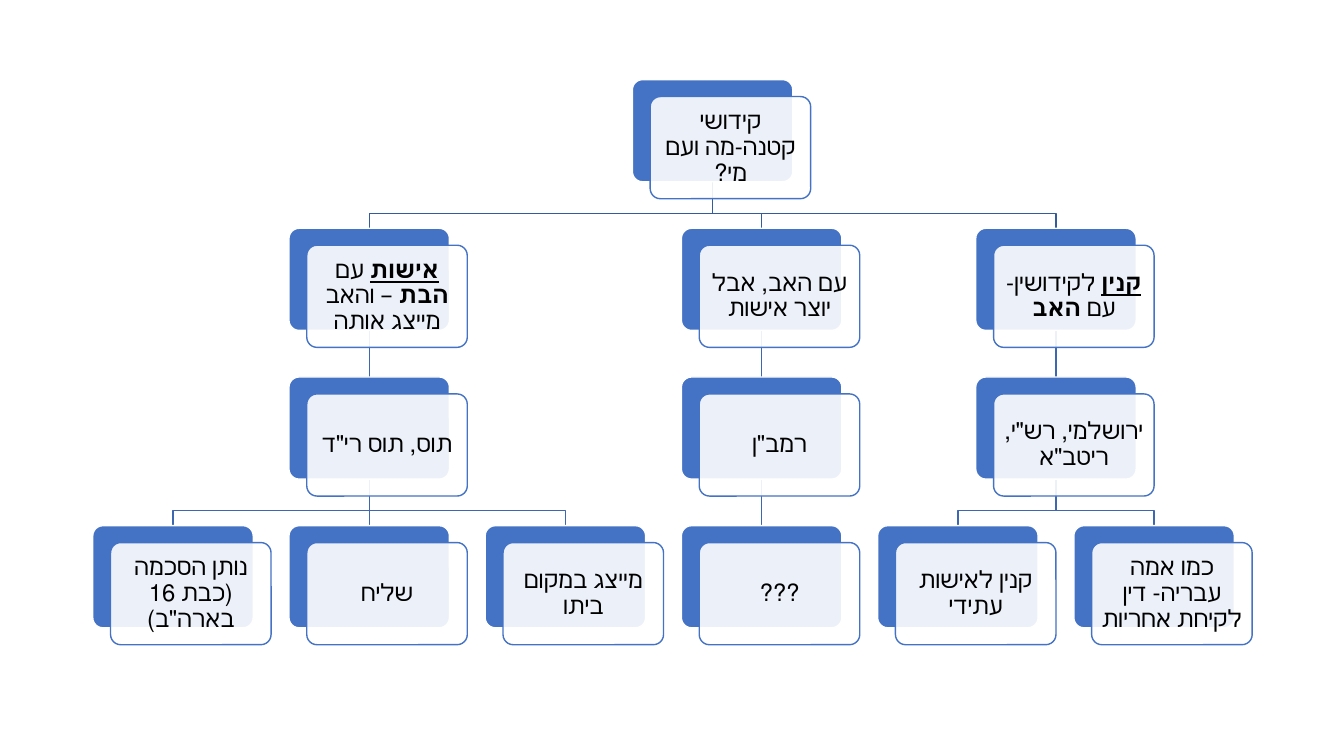
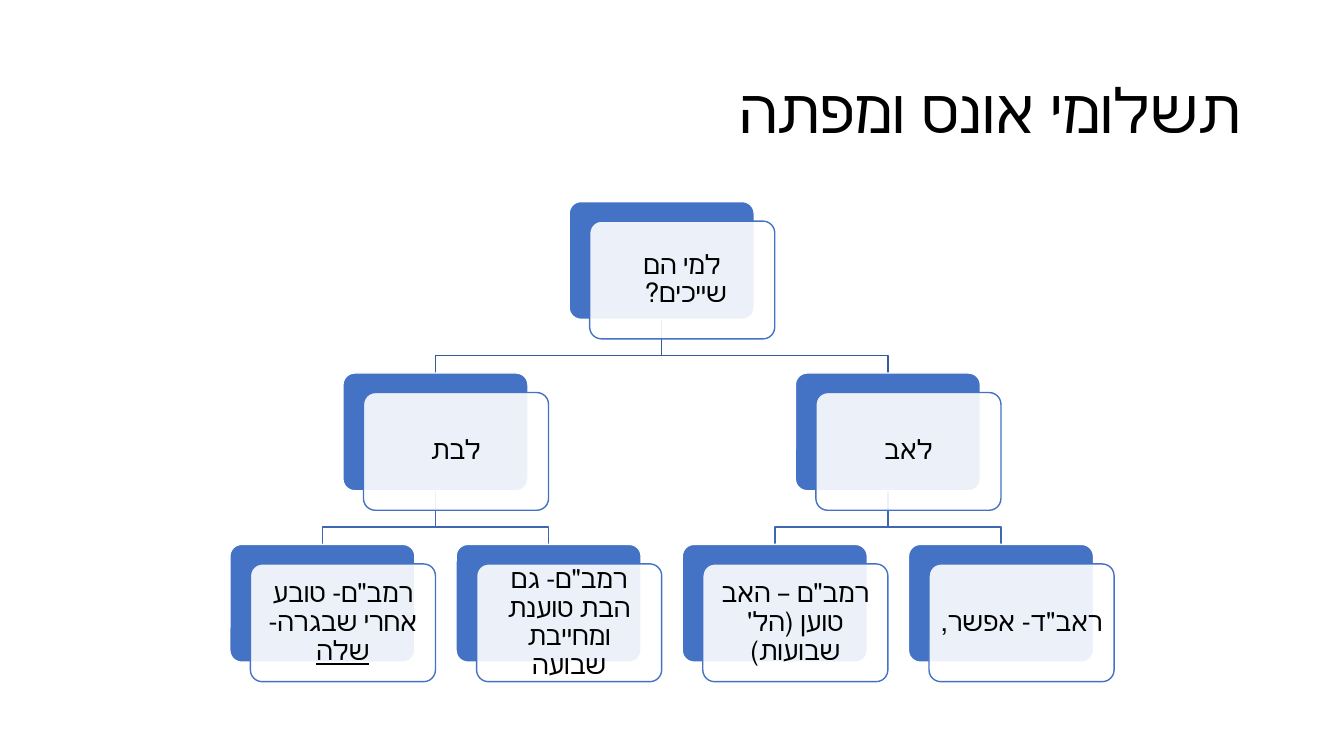
from dataclasses import dataclass
from math import isclose

from pptx import Presentation
from pptx.dml.color import RGBColor
from pptx.enum.shapes import MSO_CONNECTOR as Connector, MSO_SHAPE as Shape
from pptx.enum.text import MSO_ANCHOR as Anchor, PP_ALIGN as Align
from pptx.oxml.ns import qn
from pptx.oxml.xmlchemy import OxmlElement
from pptx.util import Inches, Pt


@dataclass(frozen=True)
class Theme:
    """Colours, font, type sizes and side margin of the deck."""
    accent: str = "4472C4"
    trunk: str = "365B9D"
    branch: str = "3E67B2"
    paper: str = "FFFFFF"
    ink: str = "000000"
    font: str = "Calibri"
    title_size: int = 44
    line_width: int = 1
    card_opacity: int = 90
    margin: float = 0.92


@dataclass
class Topic:
    """A node of the tree, its children listed from left to right."""
    label: str | list
    children: tuple = ()
    column: float = 0
    row: int = 0

    def arrange(self, row=0, first_column=0):
        """Give leaves successive columns, centre parents, return the next free column."""
        self.row = row
        if not self.children:
            self.column = first_column
            return first_column + 1
        free_column = first_column
        for child in self.children:
            free_column = child.arrange(row + 1, free_column)
        self.column = (self.children[0].column + self.children[-1].column) / 2
        return free_column

    def walk(self):
        """Yield this topic and all below it."""
        yield self
        for child in self.children:
            yield from child.walk()


@dataclass
class TreeGrid:
    """Proportions of a tree, all derived from its width and number of columns."""
    left: float
    top: float
    width: float
    columns: int
    text_size: int

    def __post_init__(self):
        self.card_width = self.width * 9 / (11 * self.columns - 1)
        self.card_height = self.card_width * 7 / 11
        self.column_step = self.card_width * 11 / 9
        self.row_step = self.card_height + self.card_width * 0.29
        self.shift_x = self.card_width / 9
        self.shift_y = self.shift_x * 0.95
        self.inset = self.card_width / 23

    def corner(self, topic):
        """Return the top left corner of a topic's back card."""
        return (self.left + topic.column * self.column_step,
                self.top + topic.row * self.row_step)


def write_text(frame, text, *, theme, size, align, inset=None):
    """Write right-to-left text, given as a string or as (text, styles) pairs."""
    frame.word_wrap = True
    frame.vertical_anchor = Anchor.MIDDLE
    if inset is not None:
        frame.margin_left = frame.margin_right = Inches(inset)
        frame.margin_top = frame.margin_bottom = Inches(inset)
    paragraph = frame.paragraphs[0]
    paragraph.alignment = align
    paragraph.line_spacing = 0.9
    paragraph._p.get_or_add_pPr().set("rtl", "1")
    for words, styles in [(text, "")] if isinstance(text, str) else text:
        run = paragraph.add_run()
        run.text = words
        font = run.font
        font.size, font.name = Pt(size), theme.font
        font.bold, font.underline = "b" in styles, "u" in styles
        font.color.rgb = RGBColor.from_string(theme.ink)


class Deck:
    """Holds the theme and the current slide, and draws each kind of element."""

    TITLE_ONLY, BLANK = 5, 6

    def __init__(self, theme):
        self.theme = theme
        self.presentation = Presentation()
        self.presentation.slide_width = Inches(13.33)
        self.presentation.slide_height = Inches(7.5)
        self.slide = None

    def add_slide(self, title=None):
        """Start a slide, with a title if one is given."""
        layout = self.TITLE_ONLY if title else self.BLANK
        self.slide = self.presentation.slides.add_slide(
            self.presentation.slide_layouts[layout])
        if title:
            self.title(title)

    def title(self, text):
        """Place and fill the title placeholder."""
        heading = self.slide.shapes.title
        width, height = self.presentation.slide_width, self.presentation.slide_height
        margin = Inches(self.theme.margin)
        heading.left, heading.top = margin, int(height * 0.06)
        heading.width, heading.height = width - 2 * margin, int(height * 0.18)
        write_text(heading.text_frame, text, theme=self.theme,
                   size=self.theme.title_size, align=Align.RIGHT)

    def outline(self, drawn, color):
        """Give a shape or connector its line."""
        drawn.line.color.rgb = RGBColor.from_string(color)
        drawn.line.width = Pt(self.theme.line_width)

    def panel(self, x, y, grid, fill, line):
        """Draw one rounded panel of a card."""
        panel = self.slide.shapes.add_shape(
            Shape.ROUNDED_RECTANGLE, Inches(x), Inches(y),
            Inches(grid.card_width), Inches(grid.card_height))
        panel.adjustments[0] = 0.1
        panel.shadow.inherit = False
        panel.fill.solid()
        panel.fill.fore_color.rgb = RGBColor.from_string(fill)
        self.outline(panel, line)
        return panel

    def card(self, topic, grid):
        """Draw a topic as a solid panel under a translucent one with the label."""
        theme = self.theme
        x, y = grid.corner(topic)
        self.panel(x, y, grid, theme.accent, theme.paper)
        front = self.panel(x + grid.shift_x, y + grid.shift_y, grid,
                           theme.paper, theme.accent)
        alpha = OxmlElement("a:alpha")
        alpha.set("val", str(theme.card_opacity * 1000))
        front._element.spPr.find(qn("a:solidFill"))[0].append(alpha)
        write_text(front.text_frame, topic.label, theme=theme, size=grid.text_size,
                   align=Align.CENTER, inset=grid.inset)

    def link(self, parent, child, grid):
        """Join a parent to a child with a straight or stepped line."""
        parent_x, parent_y = grid.corner(parent)
        child_x, end_y = grid.corner(child)
        start_x, end_x = (x + grid.card_width / 2 for x in (parent_x, child_x))
        start_y = parent_y + grid.card_height
        bend_y = start_y + (end_y - start_y) * 0.68
        start, *bends, end = [
            (Inches(x), Inches(y)) for x, y in
            ((start_x, start_y), (start_x, bend_y), (end_x, bend_y), (end_x, end_y))]
        color = self.theme.branch if parent.row else self.theme.trunk
        shapes = self.slide.shapes
        if isclose(start_x, end_x):
            line = shapes.add_connector(Connector.STRAIGHT, *start, *end)
            self.outline(line, color)
            line._element.spPr.append(OxmlElement("a:effectLst"))
        else:
            pen = shapes.build_freeform(*start, scale=1.0)
            pen.add_line_segments([*bends, end], close=False)
            step = pen.convert_to_shape()
            step.fill.background()
            step.shadow.inherit = False
            self.outline(step, color)

    def tree(self, root, *, left, top, width, text_size):
        """Draw all links, then all cards over them."""
        grid = TreeGrid(left, top, width, root.arrange(), text_size)
        topics = list(root.walk())
        for parent in topics:
            for child in parent.children:
                self.link(parent, child, grid)
        for topic in topics:
            self.card(topic, grid)


BETROTHAL = Topic("קידושי קטנה-מה ועם מי?", (
    Topic([("אישות", "bu"), (" עם ", ""), ("הבת", "b"), (" – והאב מייצג אותה", "")], (
        Topic('תוס, תוס רי"ד', (
            Topic('נותן הסכמה (כבת 16 בארה"ב)'),
            Topic("שליח"),
            Topic("מייצג במקום ביתו"))),)),
    Topic("עם האב, אבל יוצר אישות", (
        Topic('רמב"ן', (Topic("???"),)),)),
    Topic([("קנין", "bu"), (" לקידושין- עם ", ""), ("האב", "b")], (
        Topic('ירושלמי, רש"י, ריטב"א', (
            Topic("קנין לאישות עתידי"),
            Topic("כמו אמה עבריה- דין לקיחת אחריות "))),))))

PAYMENTS = Topic("למי הם שייכים? ", (
    Topic("לבת", (
        Topic([('רמב"ם- טובע אחרי שבגרה- ', ""), ("שלה", "u")]),
        Topic('רמב"ם- גם הבת טוענת ומחייבת שבועה'))),
    Topic("לאב", (
        Topic('רמב"ם – האב טוען (הל\' שבועות)'),
        Topic('ראב"ד- אפשר,')))))


def main():
    """Build both slides and save the deck."""
    theme = Theme()
    deck = Deck(theme)
    deck.add_slide()
    deck.tree(BETROTHAL, left=theme.margin, top=0.79, width=11.5, text_size=17)
    deck.add_slide("תשלומי אונס ומפתה")
    deck.tree(PAYMENTS, left=2.28, top=2, width=8.77, text_size=19)
    deck.presentation.save("out.pptx")


if __name__ == "__main__":
    main()
